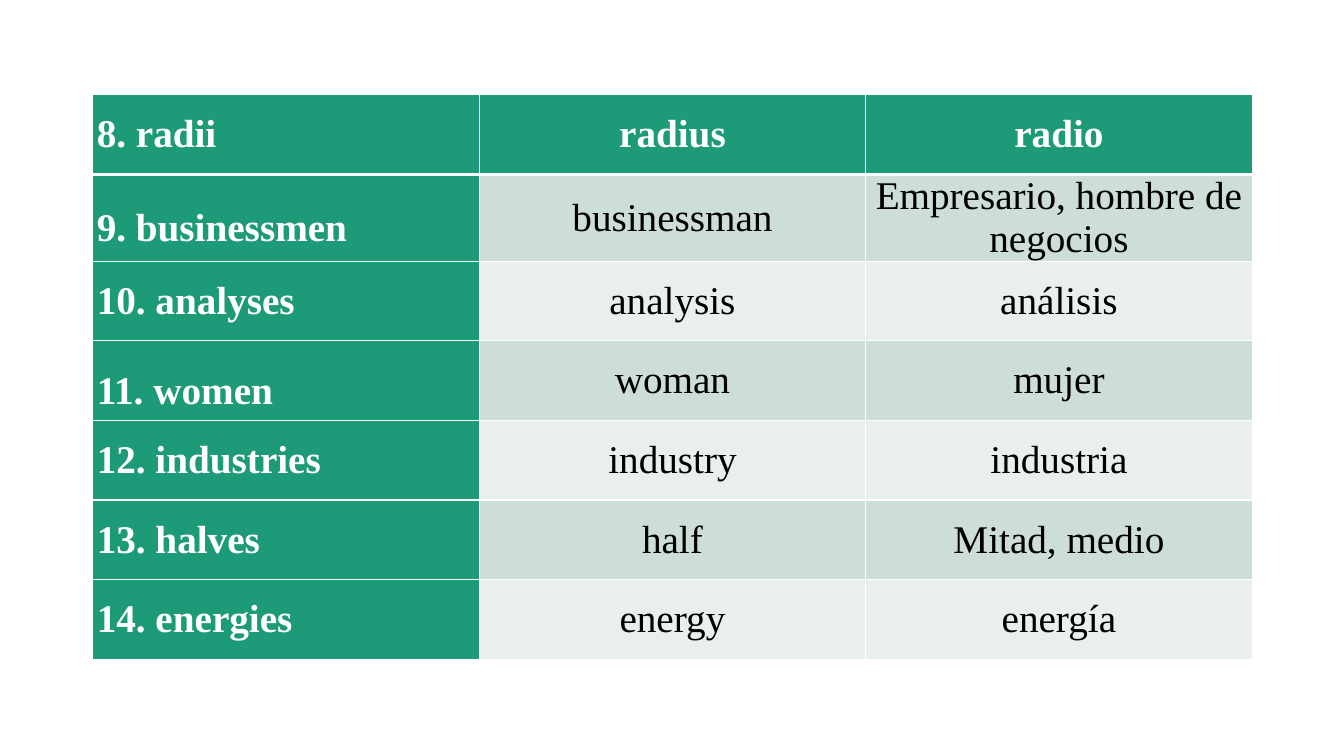
from typing import NamedTuple

from lxml import etree
from pptx import Presentation
from pptx.dml.color import RGBColor
from pptx.enum import text
from pptx.oxml import ns
from pptx.util import Inches, Pt

GREEN, MIST, PALE = "1D9A78", "CDDED6", "E8EFEC"
WHITE, BLACK = "FFFFFF", "000000"


class Noun(NamedTuple):
    plural: str
    single: str
    spanish: str
    spacing: float = 1.0


NOUNS = [
    Noun("8. radii", "radius", "radio"),
    Noun("9. businessmen", "businessman", "Empresario, hombre de negocios", 1.5),
    Noun("10. analyses", "analysis", "análisis"),
    Noun("11. women", "woman", "mujer", 1.5),
    Noun("12. industries", "industry", "industria"),
    Noun("13. halves", "half", "Mitad, medio"),
    Noun("14. energies", "energy", "energía"),
]


def paint(target, color: str) -> None:
    """Give a fill or font a solid colour."""
    if hasattr(target, "solid"):
        target.solid()
        target.fore_color.rgb = RGBColor.from_string(color)
    else:
        target.color.rgb = RGBColor.from_string(color)


def edge(cell, side: str, width: float) -> None:
    """Draw one white border of a cell."""
    line = etree.SubElement(cell._tc.get_or_add_tcPr(), ns.qn(f"a:ln{side}"), w=str(Pt(width)))
    fill = etree.SubElement(line, ns.qn("a:solidFill"))
    etree.SubElement(fill, ns.qn("a:srgbClr"), val=WHITE)


def write(cell, words: str, row: int, col: int, spacing: float) -> None:
    """Format a cell by its row and column and add its words."""
    head = row == 0 or col == 0
    for side in "LRTB":
        thick = (row == 0 and side == "B") or (row == 1 and side == "T")
        edge(cell, side, 3 if thick else 1)
    paint(cell.fill, GREEN if head else MIST if row % 2 else PALE)
    cell.vertical_anchor = text.MSO_ANCHOR.MIDDLE
    cell.margin_left = cell.margin_right = Inches(0.07 if col else 0.04)
    cell.margin_top = cell.margin_bottom = 0
    para = cell.text_frame.paragraphs[0]
    para.alignment = text.PP_ALIGN.CENTER if col else text.PP_ALIGN.LEFT
    if col == 0 and spacing > 1:
        para.line_spacing = spacing
    else:
        para.space_after = Pt(4.4)
    run = para.add_run()
    run.text = words
    run.font.name, run.font.size, run.font.bold = "Times New Roman", Pt(28), head
    paint(run.font, WHITE if head else BLACK)


def main() -> None:
    """Build the slide with the table of plurals."""
    deck = Presentation()
    deck.slide_width, deck.slide_height = Inches(13.33), Inches(7.5)
    slide = deck.slides.add_slide(deck.slide_layouts[6])
    paint(slide.background.fill, WHITE)
    frame = slide.shapes.add_table(
        len(NOUNS), 3, Inches(0.92), Inches(0.94), Inches(11.5), Inches(0.79 * len(NOUNS)))
    table = frame.table
    for col in table.columns:
        col.width = Inches(11.5 / 3)
    for row, noun in enumerate(NOUNS):
        table.rows[row].height = Inches(0.79)
        for col, words in enumerate(noun[:3]):
            write(table.cell(row, col), words, row, col, noun.spacing)
    deck.save("out.pptx")


if __name__ == "__main__":
    main()
